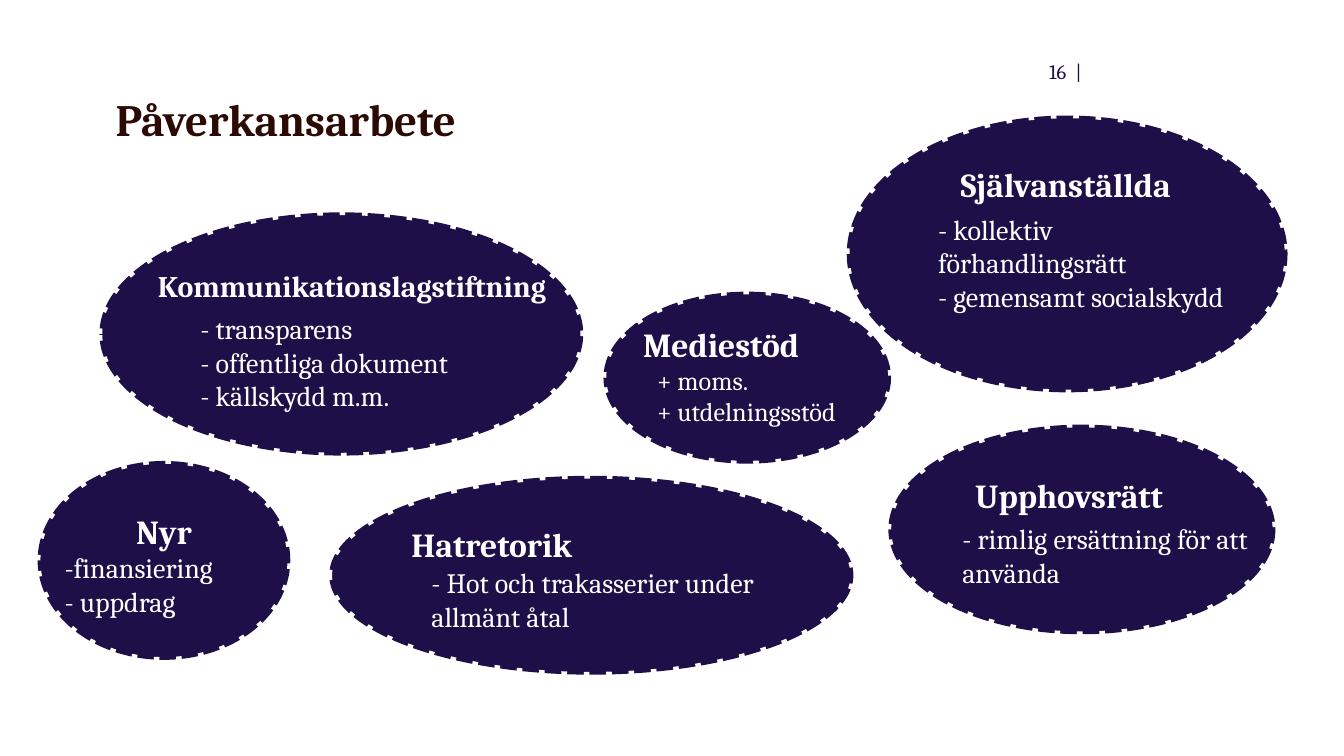
from dataclasses import dataclass

from pptx import Presentation
from pptx.dml.color import RGBColor
from pptx.enum.dml import MSO_LINE
from pptx.enum.shapes import MSO_SHAPE
from pptx.enum.text import MSO_ANCHOR, MSO_AUTO_SIZE, PP_ALIGN
from pptx.oxml.ns import qn
from pptx.util import Inches, Pt


@dataclass(frozen=True)
class Theme:
    font: str = "Cambria"
    navy: str = "1E0F49"
    brown: str = "2B0A03"
    white: str = "FFFFFF"
    title_size: int = 24
    heading_size: int = 18
    long_heading_size: int = 16
    body_size: int = 15
    small_body_size: int = 14
    page_size: int = 11
    outline_width: int = 3


THEME = Theme()
SLIDE_WIDTH = Inches(10)
SLIDE_HEIGHT = SLIDE_WIDTH * 9 // 16

# Bubble box, then heading and body boxes as offsets from the bubble's corner.
BUBBLES = [
    {"box": (6.3, 0.86, 3.28, 2.06),
     "heading": ("Självanställda", (0.31, 0.32, 2.64, 0.38)),
     "body": (["- kollektiv förhandlingsrätt", "- gemensamt socialskydd"],
              (0.61, 0.68, 2.42, 0.83))},
    {"box": (2.45, 3.54, 3.9, 1.48),
     "heading": ("Hatretorik", (0.54, 0.32, 3.41, 0.38)),
     "heading_align": PP_ALIGN.LEFT,
     "body": (["- Hot och trakasserier under allmänt åtal"],
              (0.69, 0.63, 3.1, 0.58))},
    {"box": (0.28, 3.43, 1.88, 1.48),
     "heading": ("Nyr", (0.13, 0.33, 1.62, 0.38)),
     "body": (["-finansiering", "- uppdrag"], (0.13, 0.63, 1.39, 0.58))},
    {"box": (0.74, 1.58, 3.6, 1.81),
     "heading": ("Kommunikationslagstiftning", (0.28, 0.37, 3.2, 0.34)),
     "heading_size": THEME.long_heading_size,
     "body": (["- transparens", "- offentliga dokument", "- källskydd m.m."],
              (0.68, 0.7, 2.39, 0.83))},
    {"box": (6.61, 3.16, 2.88, 1.56),
     "heading": ("Upphovsrätt", (0, 0.33, 2.69, 0.38)),
     "body": (["- rimlig ersättning för att använda"],
              (0.48, 0.68, 2.6, 0.58))},
    {"box": (4.49, 2.17, 2.14, 1.28),
     "heading": ("Mediestöd", (-0.08, 0.2, 1.91, 0.38)),
     "body": (["+ moms.", "+ utdelningsstöd"], (0.33, 0.5, 1.83, 0.55)),
     "body_size": THEME.small_body_size},
]


def set_attributes(target, values):
    for name, value in values.items():
        setattr(target, name, value)


def lengths(box):
    return [Inches(value) for value in box]


def write_text(shape, lines, size, color, bold=False, align=PP_ALIGN.LEFT,
               anchor=MSO_ANCHOR.TOP, auto_size=MSO_AUTO_SIZE.NONE, spacing=None):
    frame = shape.text_frame
    frame.text = "\n".join(lines)
    set_attributes(frame, {
        "word_wrap": True, "auto_size": auto_size, "vertical_anchor": anchor,
        "margin_left": Inches(0.07), "margin_right": Inches(0.07),
        "margin_top": Inches(0.04), "margin_bottom": Inches(0.04),
    })
    for paragraph in frame.paragraphs:
        set_attributes(paragraph, {"alignment": align, "line_spacing": spacing})
        for run in paragraph.runs:
            set_attributes(run.font, {"name": THEME.font, "size": Pt(size), "bold": bold})
            run.font.color.rgb = RGBColor.from_string(color)


def add_header(slide, title_box, page_box):
    title = slide.shapes.title
    set_attributes(title, dict(zip(("left", "top", "width", "height"), lengths(title_box))))
    write_text(title, ["Påverkansarbete"], THEME.title_size, THEME.brown, bold=True,
               anchor=MSO_ANCHOR.MIDDLE, spacing=0.9)
    page = slide.shapes.add_textbox(*lengths(page_box))
    write_text(page, ["16  |"], THEME.page_size, THEME.navy,
               align=PP_ALIGN.RIGHT, anchor=MSO_ANCHOR.MIDDLE)


def add_ellipse(shapes, box):
    ellipse = shapes.add_shape(MSO_SHAPE.OVAL, *lengths(box))
    ellipse.shadow.inherit = False
    ellipse.fill.solid()
    ellipse.fill.fore_color.rgb = RGBColor.from_string(THEME.navy)
    line = ellipse.line
    line.color.rgb = RGBColor.from_string(THEME.white)
    set_attributes(line, {"width": Pt(THEME.outline_width), "dash_style": MSO_LINE.ROUND_DOT})
    # The plain "dot" preset has no member in MSO_LINE.
    ellipse.element.spPr.find(f".//{qn('a:prstDash')}").set("val", "dot")


def add_bubble(slide, bubble):
    left, top = bubble["box"][:2]
    shapes = slide.shapes.add_group_shape().shapes
    add_ellipse(shapes, bubble["box"])

    def add_label(lines, offset, size, **text_format):
        x, y, width, height = offset
        label = shapes.add_textbox(*lengths((left + x, top + y, width, height)))
        write_text(label, lines, size, THEME.white,
                   auto_size=MSO_AUTO_SIZE.SHAPE_TO_FIT_TEXT, **text_format)

    heading, heading_offset = bubble["heading"]
    add_label([heading], heading_offset, bubble.get("heading_size", THEME.heading_size),
              bold=True, align=bubble.get("heading_align", PP_ALIGN.CENTER))
    lines, body_offset = bubble["body"]
    add_label(lines, body_offset, bubble.get("body_size", THEME.body_size))


def main():
    presentation = Presentation()
    set_attributes(presentation, {"slide_width": SLIDE_WIDTH, "slide_height": SLIDE_HEIGHT})
    slide = presentation.slides.add_slide(presentation.slide_layouts.get_by_name("Title Only"))
    add_header(slide, title_box=(0.79, 0.67, 6.78, 0.48), page_box=(5.87, 0.38, 2.25, 0.3))
    for bubble in BUBBLES:
        add_bubble(slide, bubble)
    presentation.save("out.pptx")


if __name__ == "__main__":
    main()
